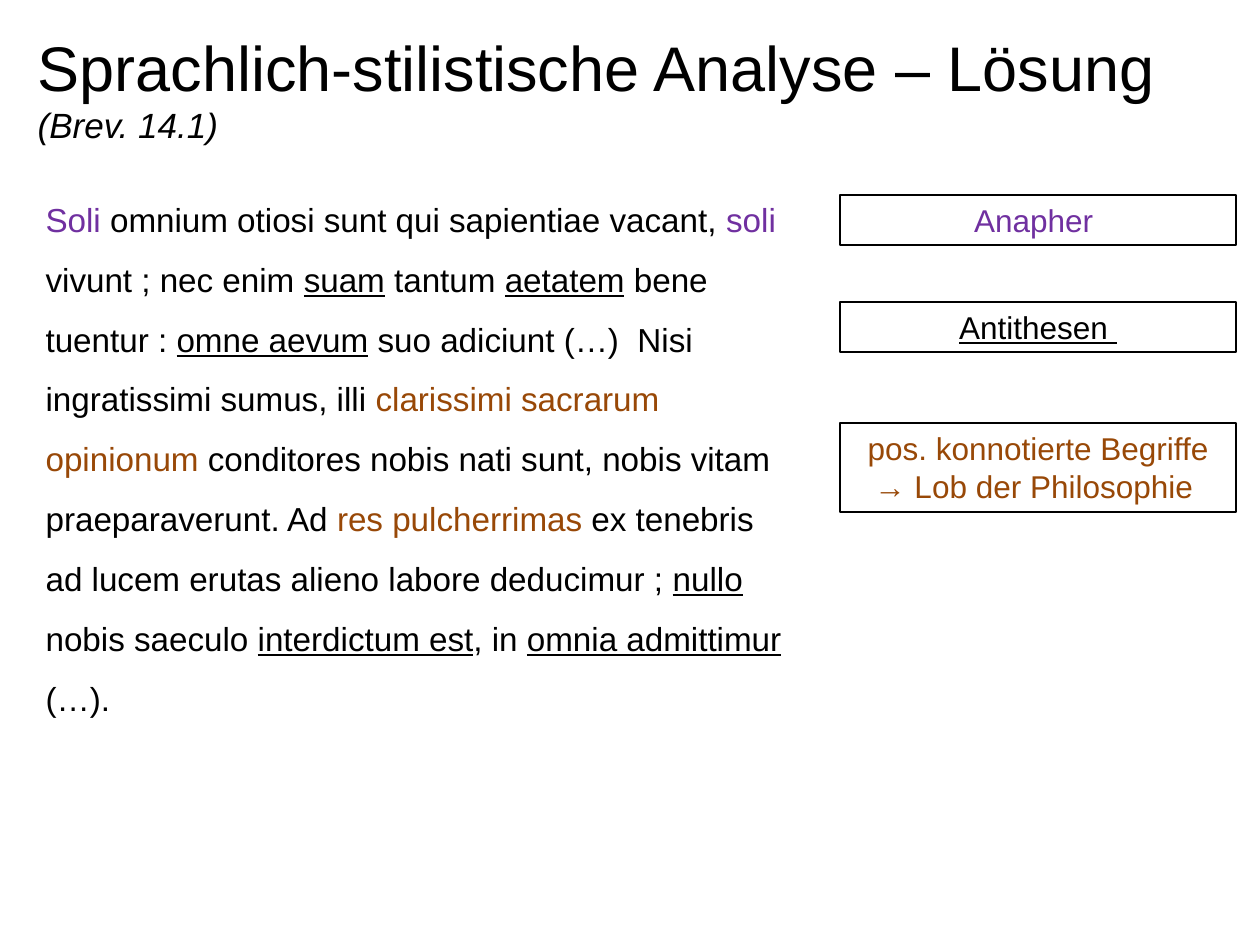
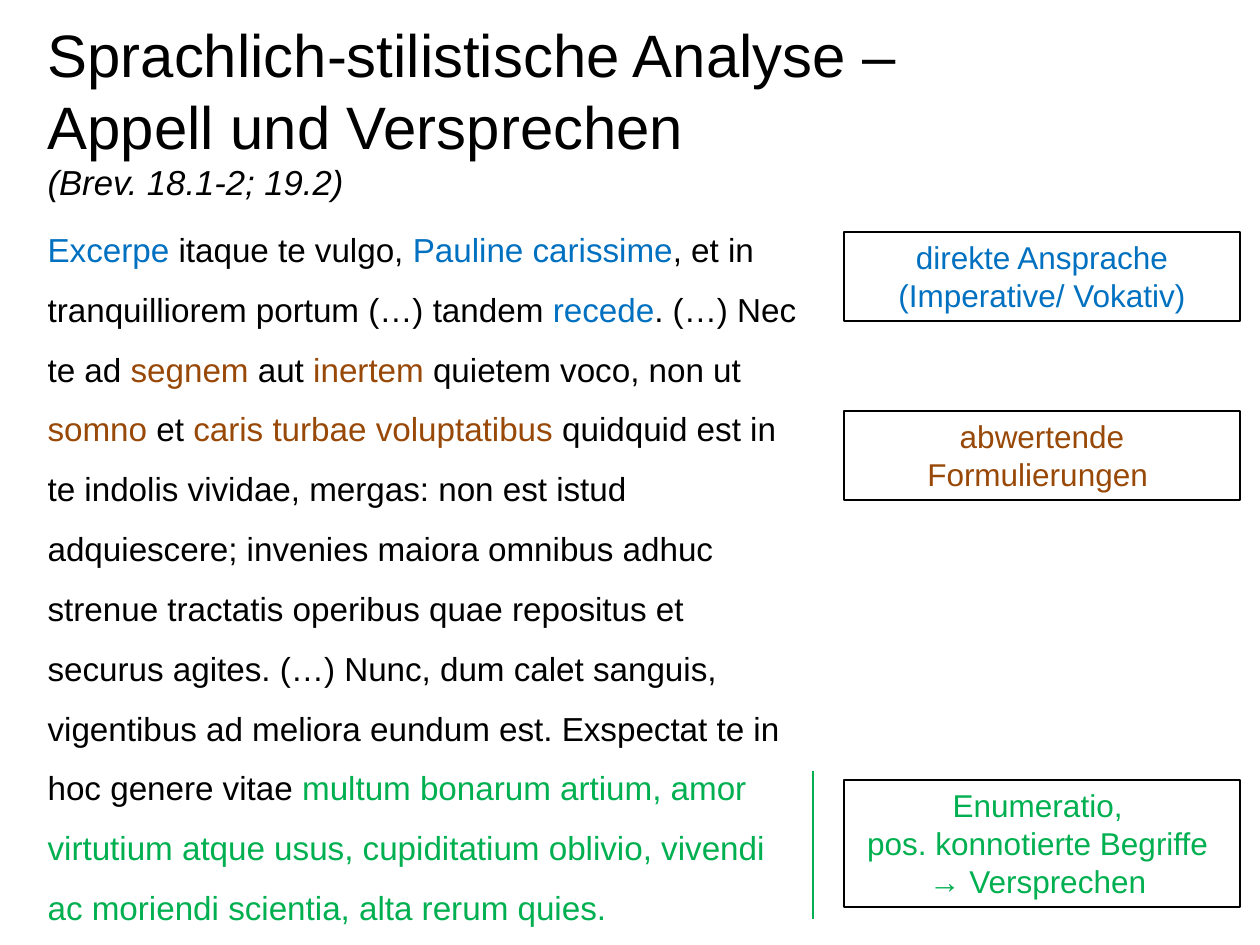
from lxml import etree
from pptx import Presentation
from pptx import util as u
from pptx.dml.color import RGBColor
from pptx.enum import shapes, text
from pptx.oxml.ns import qn

PX = 914400 / 126
FONT = "Arial"
COLORS = {
    "black": "000000",
    "purple": "7030A0",
    "brown": "984807",
    "blue": "0070C0",
    "green": "00B050",
}
NOTE_WIDTH = 396
UNDERLINED = "underlined"


def px(length):
    return u.Emu(round(length * PX))


def color(name):
    return RGBColor.from_string(COLORS[name])


def place(shape, box):
    shape.left, shape.top, shape.width, shape.height = map(px, box)


def set_font(font, size, color_name="black"):
    font.name = FONT
    font.size = u.Pt(size)
    font.color.rgb = color(color_name)


def style_span(span, style):
    if style == UNDERLINED:
        span.font.underline = True
    elif style:
        span.font.color.rgb = color(style)


def fill_title(page, box, lines, source, size, source_size):
    title = page.shapes.title
    place(title, box)
    frame = title.text_frame
    frame.auto_size = text.MSO_AUTO_SIZE.NONE
    frame.vertical_anchor = text.MSO_ANCHOR.MIDDLE
    para = frame.paragraphs[0]
    para.alignment = text.PP_ALIGN.LEFT
    set_font(para.font, size)
    for line in lines:
        para.add_run().text = line
        para.add_line_break()
    span = para.add_run()
    span.text = source
    span.font.size = u.Pt(source_size)
    span.font.italic = True


def fill_passage(page, box, passage):
    body = page.placeholders[1]
    place(body, box)
    frame = body.text_frame
    frame.auto_size = text.MSO_AUTO_SIZE.NONE
    para = frame.paragraphs[0]
    para.line_spacing = 1.5
    set_font(para.font, 19)
    properties = para._p.get_or_add_pPr()
    properties.set("marL", "0")
    properties.set("indent", "0")
    properties.insert_element_before(
        etree.Element(qn("a:buNone")), "a:tabLst", "a:defRPr", "a:extLst")
    for style, words in passage:
        span = para.add_run()
        span.text = words
        style_span(span, style)


def add_note(parent, left, top, height, style, lines):
    box = [px(length) for length in (left, top, NOTE_WIDTH, height)]
    note = parent.add_shape(shapes.MSO_SHAPE.RECTANGLE, *box)
    note.shadow.inherit = False
    note.fill.background()
    note.line.color.rgb = color("black")
    note.line.width = u.Pt(0.75)
    frame = note.text_frame
    frame.word_wrap = True
    frame.vertical_anchor = text.MSO_ANCHOR.TOP
    for index, line in enumerate(lines):
        para = frame.add_paragraph() if index else frame.paragraphs[0]
        para.alignment = text.PP_ALIGN.CENTER
        set_font(para.font, 18)
        para.add_run().text = line
        style_span(para, style)


def add_bracket(parent, left, top, height):
    bracket = parent.add_connector(
        shapes.MSO_CONNECTOR.STRAIGHT,
        px(left), px(top), px(left), px(top + height))
    bracket.line.color.rgb = color("green")
    bracket.line.width = u.Pt(1.25)
    etree.SubElement(bracket._element.spPr, qn("a:effectLst"))


def add_page(deck):
    return deck.slides.add_slide(deck.slide_layouts[1])


def build_praise(deck):
    page = add_page(deck)
    fill_title(page, (25, 8, 1211, 158),
               ["Sprachlich-stilistische Analyse – Lösung "],
               "(Brev. 14.1)", 36, 20)
    fill_passage(page, (33, 173, 774, 770), [
        ("purple", "Soli"),
        (None, " omnium otiosi sunt qui sapientiae vacant, "),
        ("purple", "soli "),
        (None, "vivunt ; nec enim "),
        (UNDERLINED, "suam"),
        (None, " tantum "),
        (UNDERLINED, "aetatem"),
        (None, " bene tuentur : "),
        (UNDERLINED, "omne aevum"),
        (None, " suo adiciunt (…)  Nisi ingratissimi sumus, illi "),
        ("brown", "clarissimi sacrarum opinionum"),
        (None, " conditores nobis nati sunt, nobis vitam praeparaverunt. Ad "),
        ("brown", "res pulcherrimas"),
        (None, " ex tenebris ad lucem erutas alieno labore deducimur ; "),
        (UNDERLINED, "nullo"),
        (None, " nobis saeculo "),
        (UNDERLINED, "interdictum est"),
        (None, ", in "),
        (UNDERLINED, "omnia admittimur "),
        (None, "(…)."),
    ])
    for top, height, style, line in (
        (195, 50, "purple", "Anapher "),
        (302, 50, UNDERLINED, "Antithesen "),
        (423, 89, "brown",
         "pos. konnotierte Begriffe → Lob der Philosophie "),
    ):
        add_note(page.shapes, 840, top, height, style, [line])


def build_appeal(deck):
    page = add_page(deck)
    fill_title(page, (35, 8, 1211, 204),
               ["Sprachlich-stilistische Analyse – ",
                "Appell und Versprechen "],
               "(Brev. 18.1-2; 19.2)", 34.2, 19.8)
    fill_passage(page, (35, 203, 774, 727), [
        ("blue", "Excerpe"),
        (None, " itaque te vulgo, "),
        ("blue", "Pauline carissime"),
        (None, ", et in tranquilliorem portum (…) tandem "),
        ("blue", "recede"),
        (None, ". (…) Nec te ad "),
        ("brown", "segnem"),
        (None, " aut "),
        ("brown", "inertem"),
        (None, " quietem voco, non ut "),
        ("brown", "somno"),
        (None, " et "),
        ("brown", "caris turbae voluptatibus"),
        (None, " quidquid est in te indolis vividae, mergas: non est istud "
               "adquiescere; invenies maiora omnibus adhuc strenue tractatis "
               "operibus quae repositus et securus agites. (…) Nunc, dum "
               "calet sanguis, vigentibus ad meliora eundum est. Exspectat "
               "te in hoc genere vitae "),
        ("green", "multum bonarum artium, amor virtutium atque usus, "
                  "cupiditatium oblivio, vivendi ac moriendi scientia, "
                  "alta rerum quies."),
    ])
    left = 844
    add_note(page.shapes, left, 232, 89, "blue",
             ["direkte Ansprache (Imperative/ Vokativ)"])
    add_note(page.shapes, left, 411, 89, "brown",
             ["abwertende Formulierungen "])
    promise = page.shapes.add_group_shape().shapes
    add_note(promise, left, 780, 127, "green",
             ["Enumeratio, ", "pos. konnotierte Begriffe ",
              "→ Versprechen "])
    add_bracket(promise, 813, 771, 148)


def main():
    deck = Presentation()
    deck.slide_width, deck.slide_height = px(1260), px(945)
    build_praise(deck)
    build_appeal(deck)
    deck.save("out.pptx")


if __name__ == "__main__":
    main()
